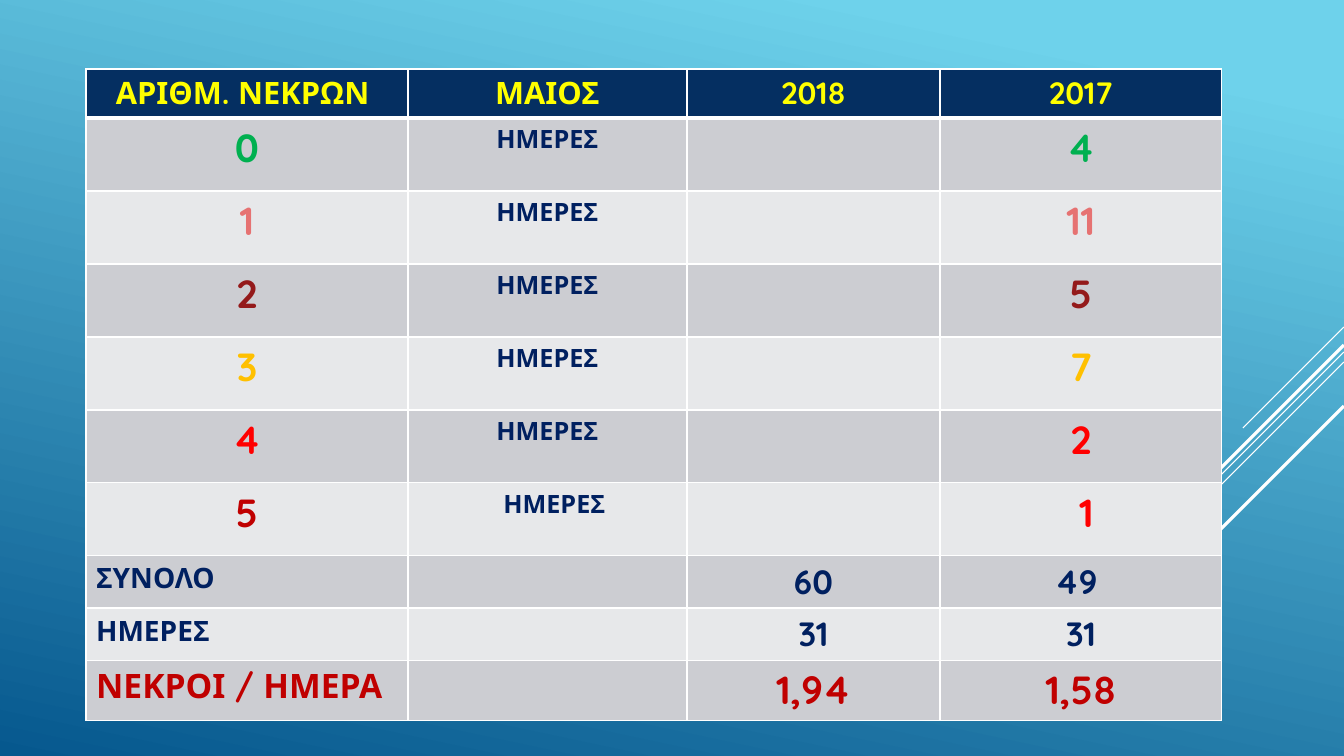
import pptx
import pptx.util
import pptx.dml.color
import pptx.enum.shapes
import pptx.enum.text
import pptx.oxml
import pptx.oxml.ns
import lxml.etree

WIDE, HIGH = 1344, 756
FONT = "Quicksand"
WHITE, NAVY, BLUE, YELLOW = "FFFFFF", "052F61", "002060", "FFFF00"
GREEN, RED, DARK = "00B050", "FF0000", "C00000"
BANDS = ["CCCDD2", "E7E8EA"]
DAYS = "ΗΜΕΡΕΣ"


def px(size):
    return pptx.util.Emu(round(size * 914400 / 100.8))


def color(code):
    return pptx.dml.color.RGBColor.from_string(code)


def write(cell, text, size=18, ink=BLUE, left=False, dent=0):
    para = cell.text_frame.paragraphs[0]
    align = pptx.enum.text.PP_ALIGN
    para.alignment = align.LEFT if left else align.CENTER
    if dent:
        cell.margin_left = px(10 + dent)
    run = para.add_run()
    run.text = text
    run.font.name = FONT
    run.font.size = pptx.util.Pt(size)
    run.font.bold = True
    run.font.color.rgb = color(ink)


def border(cell, side, width):
    props = cell._tc.get_or_add_tcPr()
    line = lxml.etree.SubElement(props, pptx.oxml.ns.qn("a:ln" + side))
    line.set("w", str(pptx.util.Pt(width)))
    fill = lxml.etree.SubElement(line, pptx.oxml.ns.qn("a:solidFill"))
    lxml.etree.SubElement(fill, pptx.oxml.ns.qn("a:srgbClr")).set("val", WHITE)


def backdrop(slide):
    fill = slide.background.fill
    fill.gradient()
    fill.gradient_angle = 258
    for stop, (place, code) in zip(fill.gradient_stops,
                                   [(0.1, "6ED2EB"), (1, "06588E")]):
        stop.position = place
        stop.color.rgb = color(code)


def streaks(slide, right):
    # Each streak falls at 45 degrees from the right edge: top, run, weight
    for top, run, weight in [(327, 101, 0.75), (352, 328, 0.75),
                             (362, 209, 0.75), (345, 192, 2.25),
                             (406, 140, 2.25)]:
        line = slide.shapes.add_connector(
            pptx.enum.shapes.MSO_CONNECTOR.STRAIGHT,
            px(right), px(top), px(right - run), px(top + run))
        line.line.color.rgb = color(WHITE)
        line.line.width = pptx.util.Pt(weight)
        lxml.etree.SubElement(line._element.spPr,
                              pptx.oxml.ns.qn("a:effectLst"))


def toll(slide, left, top):
    cols = [322, 279, 253, 282]
    rows = [49] + [73] * 6 + [52, 52, 60]
    grid = slide.shapes.add_table(len(rows), len(cols), px(left), px(top),
                                  px(sum(cols)), px(sum(rows))).table
    for col, width in zip(grid.columns, cols):
        col.width = px(width)
    for row, height in zip(grid.rows, rows):
        row.height = px(height)

    # Borders and fills
    for r in range(len(rows)):
        for c in range(len(cols)):
            cell = grid.cell(r, c)
            for side in "LRTB":
                thick = (r, side) in [(0, "B"), (1, "T")]
                border(cell, side, 3 if thick else 1)
            cell.fill.solid()
            cell.fill.fore_color.rgb = color(BANDS[(r - 1) % 2] if r else NAVY)

    # Header
    for c, head in enumerate(["ΑΡΙΘΜ. ΝΕΚΡΩΝ ", "ΜΑΙΟΣ", "2018", "2017"]):
        write(grid.cell(0, c), head, size=22, ink=YELLOW)

    # Days for each number of deaths
    counts = [("4", GREEN, GREEN), ("11", "E67272", "E67272"),
              ("5", "941A1B", "941A1B"), ("7", "FFC000", "FFC000"),
              ("2", RED, RED), (" 1", DARK, RED)]
    for dead, (days, ink, tint) in enumerate(counts):
        write(grid.cell(dead + 1, 0), str(dead), size=28, ink=ink)
        write(grid.cell(dead + 1, 1), DAYS, dent=14 if dead == 5 else 0)
        write(grid.cell(dead + 1, 3), days, size=28, ink=tint)

    # Totals
    sums = [("ΣΥΝΟΛΟ", "60", "49 ", 20, 24, BLUE),
            (DAYS, "31", "31", 20, 24, BLUE),
            ("ΝΕΚΡΟΙ / ΗΜΕΡΑ", "1,94", "1,58", 24, 28, DARK)]
    for r, (label, new, old, small, big, ink) in enumerate(sums, 7):
        write(grid.cell(r, 0), label, size=small, ink=ink, left=True)
        write(grid.cell(r, 2), new, size=big, ink=ink)
        write(grid.cell(r, 3), old, size=big, ink=ink)


def main():
    deck = pptx.Presentation()
    deck.slide_width, deck.slide_height = px(WIDE), px(HIGH)
    slide = deck.slides.add_slide(deck.slide_layouts[6])
    backdrop(slide)
    streaks(slide, WIDE)
    toll(slide, 86, 69)
    deck.save("out.pptx")


if __name__ == "__main__":
    main()
